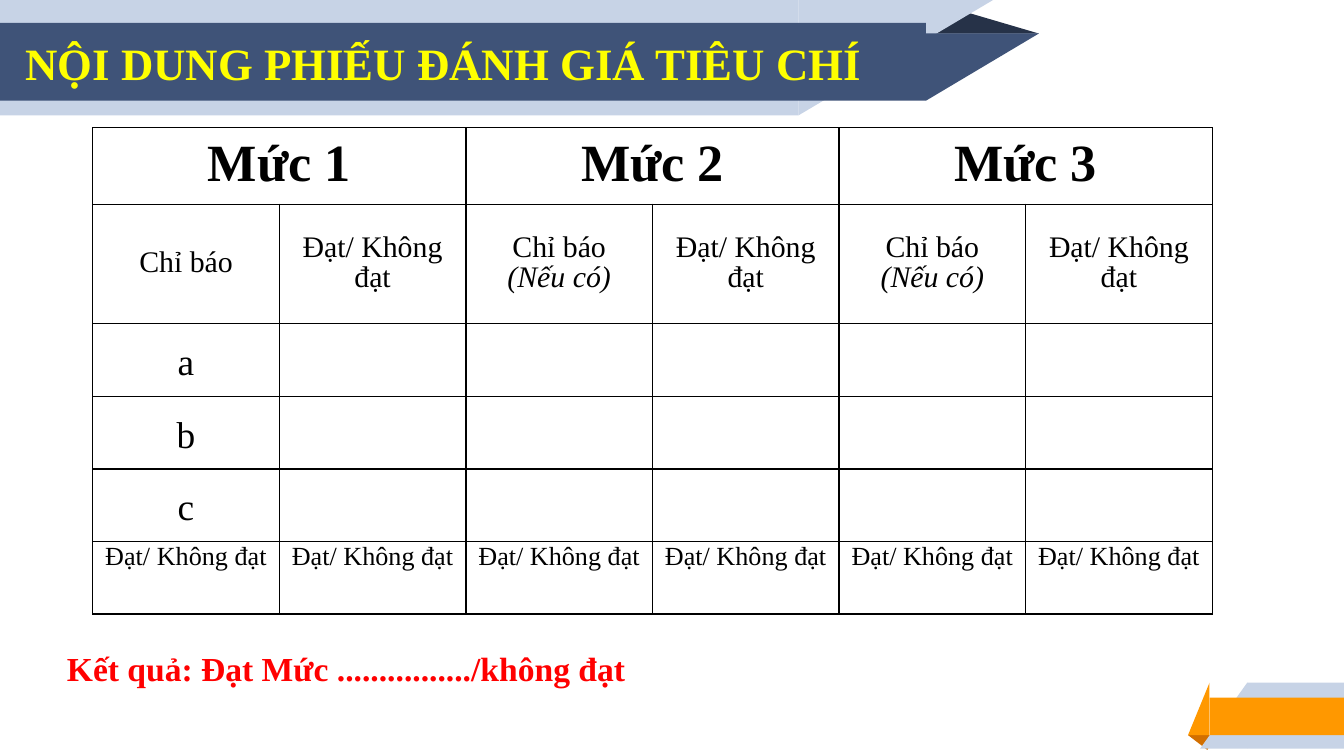
import pptx
import pptx.util
import pptx.dml.color
import pptx.enum.shapes
import pptx.enum.text
import lxml.etree
import pptx.oxml.ns

Inches = pptx.util.Inches
Pt = pptx.util.Pt
RGBColor = pptx.dml.color.RGBColor
MSO_SHAPE = pptx.enum.shapes.MSO_SHAPE
MSO_ANCHOR = pptx.enum.text.MSO_ANCHOR
PP_ALIGN = pptx.enum.text.PP_ALIGN

FONT = "Times New Roman"
NAVY = RGBColor(0x3F, 0x53, 0x78)
DARK_NAVY = RGBColor(0x26, 0x32, 0x48)
PALE_BLUE = RGBColor(0xC7, 0xD3, 0xE6)
ORANGE = RGBColor(0xFF, 0x98, 0x00)
DARK_ORANGE = RGBColor(0xD2, 0x6F, 0x00)
YELLOW = RGBColor(0xFF, 0xFF, 0x00)
RED = RGBColor(0xFF, 0x00, 0x00)
BLACK = RGBColor(0x00, 0x00, 0x00)


def style(paragraph, size, color, bold=False, italic=False):
    paragraph.font.name = FONT
    paragraph.font.size = Pt(size)
    paragraph.font.color.rgb = color
    paragraph.font.bold = bold
    paragraph.font.italic = italic


def add_borders(cell):
    properties = cell._tc.get_or_add_tcPr()
    for position, side in enumerate(("lnL", "lnR", "lnT", "lnB")):
        line = lxml.etree.Element(pptx.oxml.ns.qn("a:" + side), w=str(Pt(0.75)))
        fill = lxml.etree.SubElement(line, pptx.oxml.ns.qn("a:solidFill"))
        lxml.etree.SubElement(fill, pptx.oxml.ns.qn("a:srgbClr"), val=str(BLACK))
        properties.insert(position, line)


# Widescreen 16:9 slide
prs = pptx.Presentation()
prs.slide_width = Inches(10)
prs.slide_height = Inches(10 * 9 / 16)
slide = prs.slides.add_slide(prs.slide_layouts[6])

# Ribbons: title banner at the top, then the corner ribbon
ribbon_parts = [
    (MSO_SHAPE.ISOSCELES_TRIANGLE, 6.88, 0.08, 0.85, 0.17, DARK_NAVY, None),
    (MSO_SHAPE.RECTANGLE, 0, 0, 5.94, 0.86, PALE_BLUE, None),
    (MSO_SHAPE.RIGHT_TRIANGLE, 5.94, 0, 1.45, 0.86, PALE_BLUE, "flipV"),
    (MSO_SHAPE.RECTANGLE, 0, 0.17, 6.89, 0.58, NAVY, None),
    (MSO_SHAPE.RIGHT_TRIANGLE, 6.89, 0.25, 0.84, 0.5, NAVY, "flipV"),
    (MSO_SHAPE.ISOSCELES_TRIANGLE, 8.84, 5.47, 0.21, 0.11, DARK_ORANGE, "rotate"),
    (MSO_SHAPE.RECTANGLE, 9.28, 5.08, 0.73, 0.49, PALE_BLUE, None),
    (MSO_SHAPE.RIGHT_TRIANGLE, 8.93, 5.08, 0.35, 0.49, PALE_BLUE, "flipH"),
    (MSO_SHAPE.RECTANGLE, 9, 5.19, 1.01, 0.28, ORANGE, None),
    (MSO_SHAPE.RIGHT_TRIANGLE, 8.84, 5.08, 0.16, 0.39, ORANGE, "flipH"),
]
for preset, left, top, width, height, color, turn in ribbon_parts:
    ribbon = slide.shapes.add_shape(
        preset, Inches(left), Inches(top), Inches(width), Inches(height))
    ribbon.shadow.inherit = False
    ribbon.fill.solid()
    ribbon.fill.fore_color.rgb = color
    ribbon.line.fill.background()
    if preset == MSO_SHAPE.ISOSCELES_TRIANGLE:
        ribbon.adjustments[0] = 0.32
    if turn == "rotate":
        ribbon.rotation = 180
    elif turn:
        ribbon._element.spPr.xfrm.set(turn, "1")

# Title and result line
for text, left, top, width, height, size, color in [
    ("NỘI DUNG PHIẾU ĐÁNH GIÁ TIÊU CHÍ", 0.09, 0.22, 6.49, 0.74, 24, YELLOW),
    ("Kết quả: Đạt Mức ................/không đạt", 0.4, 4.77, 6.87, 0.64, 18, RED),
]:
    caption = slide.shapes.add_textbox(
        Inches(left), Inches(top), Inches(width), Inches(height)).text_frame
    caption.word_wrap = True
    caption.text = text
    style(caption.paragraphs[0], size, color, bold=True)

# Assessment table
RESULT = "Đạt/ Không đạt"
OPTIONAL = "Chỉ báo\n(Nếu có)"
rows = [
    ["Mức 1", "", "Mức 2", "", "Mức 3", ""],
    ["Chỉ báo", RESULT, OPTIONAL, RESULT, OPTIONAL, RESULT],
    *[[indicator] + [""] * 5 for indicator in "abc"],
    [RESULT] * 6,
]
row_heights = [0.57, 0.89, 0.54, 0.54, 0.54, 0.54]
row_sizes = [28, 16, 20, 20, 20, 14]

criteria = slide.shapes.add_table(
    6, 6, Inches(0.69), Inches(0.95), Inches(8.33), Inches(sum(row_heights))).table
criteria.first_row = False
criteria.horz_banding = False
for column in criteria.columns:
    column.width = Inches(8.33 / 6)
for level_column in (0, 2, 4):
    criteria.cell(0, level_column).merge(criteria.cell(0, level_column + 1))

for r, texts in enumerate(rows):
    criteria.rows[r].height = Inches(row_heights[r])
    for c, text in enumerate(texts):
        cell = criteria.cell(r, c)
        cell.fill.background()
        add_borders(cell)
        if not text:
            continue
        cell.text = text
        if r > 0:
            cell.margin_left = cell.margin_right = Inches(0.07)
            cell.margin_top = cell.margin_bottom = 0
        if r == 1:
            cell.vertical_anchor = MSO_ANCHOR.MIDDLE
        elif 2 <= r <= 4:
            cell.margin_top = Pt(16)  # indicator letters sit one line lower
        for paragraph in cell.text_frame.paragraphs:
            paragraph.alignment = PP_ALIGN.CENTER
            if r > 0:
                paragraph.line_spacing = Pt(16)
            style(paragraph, row_sizes[r], BLACK, bold=r == 0,
                  italic=paragraph.text.startswith("("))

prs.save("out.pptx")
